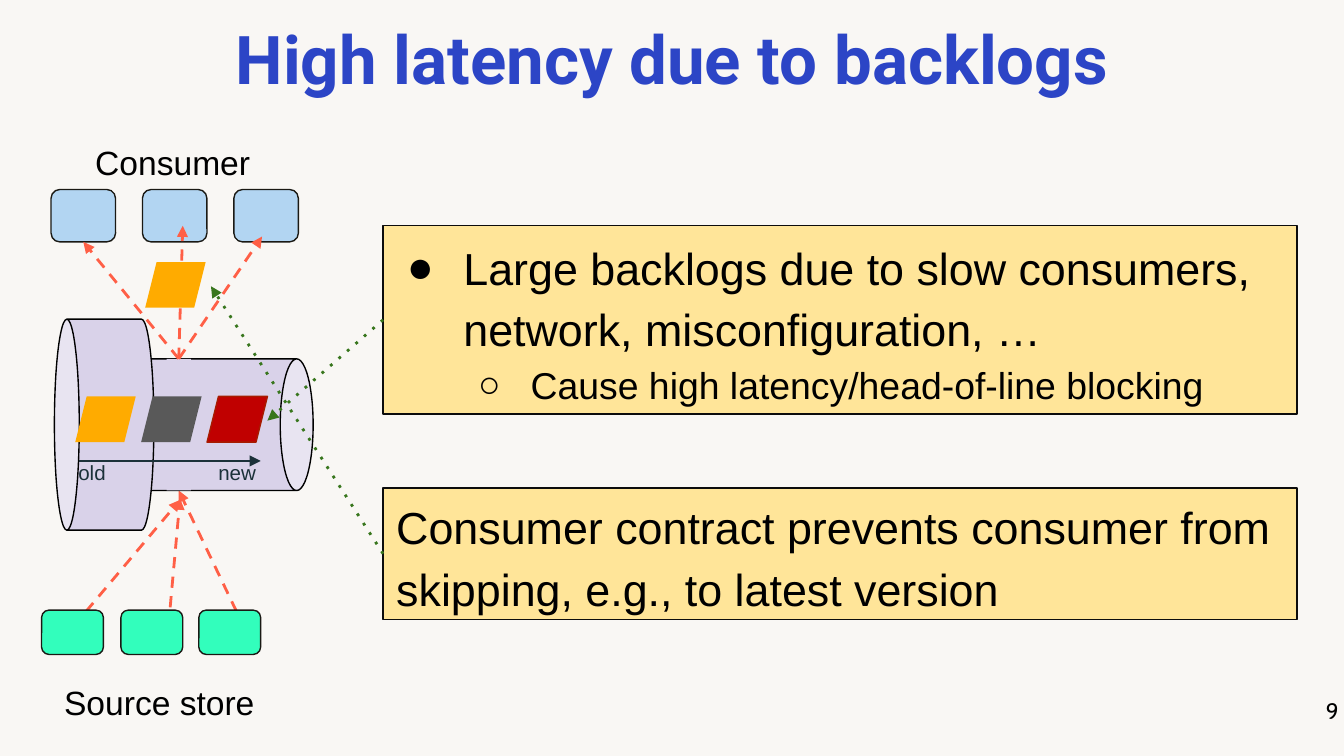
from pptx import Presentation
from pptx.dml.color import RGBColor
from pptx.enum.shapes import MSO_CONNECTOR, MSO_SHAPE
from pptx.enum.text import MSO_ANCHOR, PP_ALIGN
from pptx.oxml.ns import qn
from pptx.util import Pt
from lxml.etree import SubElement

PX = 9144
BACKGROUND = RGBColor(0xF9, 0xF7, 0xF4)
TITLE_BLUE = RGBColor(0x2C, 0x45, 0xC6)
BLACK = RGBColor(0, 0, 0)
BOX_LINE = RGBColor(0x0C, 0x0C, 0x0C)
BOX_FILL = RGBColor(0xFF, 0xE5, 0x99)
NODE_LINE = RGBColor(0x1A, 0x19, 0x14)
CONSUMER_BLUE = RGBColor(0xB2, 0xD5, 0xF2)
SOURCE_GREEN = RGBColor(0x32, 0xFE, 0xBC)
LOG_LILAC = RGBColor(0xD9, 0xD2, 0xE9)
FLOW_RED = RGBColor(0xFF, 0x5F, 0x46)
CALLOUT_GREEN = RGBColor(0x38, 0x76, 0x1D)
AXIS_NAVY = RGBColor(0x1B, 0x31, 0x39)
AMBER = RGBColor(0xFF, 0xAB, 0x00)
GRAY = RGBColor(0x59, 0x59, 0x59)
RED = RGBColor(0xC0, 0, 0)
DARK_RED = RGBColor(0xA6, 0x1C, 0)

LABELS = [
    ("High latency due to backlogs", (34, 15, 932, 63),
     dict(size=36, font="Roboto", color=TITLE_BLUE, bold=True, spacing=0.9,
          anchor=MSO_ANCHOR.MIDDLE, insets=(0, 0))),
    ("Source store", (9, 498, 219, 40), dict(size=18, spacing=1.15)),
    ("Consumer", (11, 96, 235, 40), dict(size=18, spacing=1.15)),
    ("9", (936, 519, 60, 43),
     dict(size=12, font="Cabin", align=PP_ALIGN.RIGHT, insets=(0, 0))),
]
AXIS_LABELS = [("old", (17, 333, 103, 39)), ("new", (125, 333, 103, 39))]
NOTES = [
    ((285, 168, 680, 140), [
        ("Large backlogs due to slow consumers, network, misconfiguration, …",
         dict(size=24, bullet="●", indent=(50, -42))),
        ("Cause high latency/head-of-line blocking",
         dict(size=20, bullet="○", indent=(100, -39), level=1)),
    ]),
    ((285, 363, 680, 98), [
        ("Consumer contract prevents consumer from skipping, e.g., to latest version",
         dict(size=24)),
    ]),
]
SOURCE_FLOWS = [((124, 481), (134, 371)), ((64, 455), (134, 372)), ((176, 455), (133, 365))]
CONSUMER_FLOWS = [((133, 267), end) for end in [(136, 168), (62, 180), (195, 176)]]
CALLOUTS = [((285, 412), (157, 213)), ((285, 238), (199, 313))]
NODE_ROWS = [(38, 174, 141, 48, 39, CONSUMER_BLUE), (31, 148, 454, 46, 33, SOURCE_GREEN)]
QUEUED = [(AMBER, None), (GRAY, None), (RED, DARK_RED)]


def emu(lengths):
    return [length * PX for length in lengths]


def add_bullet(paragraph, character, indent):
    properties = paragraph._p.get_or_add_pPr()
    margin, hanging = emu(indent)
    properties.set("marL", str(margin))
    properties.set("indent", str(hanging))
    color = SubElement(properties, qn("a:buClr"))
    SubElement(color, qn("a:srgbClr")).set("val", str(BLACK))
    SubElement(properties, qn("a:buFont")).set("typeface", "Arial")
    SubElement(properties, qn("a:buChar")).set("char", character)


def write(frame, text, size, font="Arial", color=BLACK, bold=False, spacing=None,
          align=PP_ALIGN.LEFT, bullet=None, indent=None, level=0, first=True):
    paragraph = frame.paragraphs[0] if first else frame.add_paragraph()
    paragraph.alignment = align
    paragraph.level = level
    if spacing:
        paragraph.line_spacing = spacing
    if bullet:
        add_bullet(paragraph, bullet, indent)
    run = paragraph.add_run()
    run.text = text
    run.font.size = Pt(size)
    run.font.name = font
    run.font.bold = bold
    run.font.color.rgb = color


def set_frame(frame, insets, anchor):
    frame.word_wrap = True
    frame.vertical_anchor = anchor
    horizontal, vertical = emu(insets)
    frame.margin_left = frame.margin_right = horizontal
    frame.margin_top = frame.margin_bottom = vertical


def add_label(slide, text, place, insets=(10, 5), anchor=MSO_ANCHOR.TOP,
              align=PP_ALIGN.CENTER, **style):
    frame = slide.shapes.add_textbox(*emu(place)).text_frame
    set_frame(frame, insets, anchor)
    write(frame, text, align=align, **style)


def add_block(slide, kind, place, fill, line=None, adjustment=None, rotation=0):
    shape = slide.shapes.add_shape(kind, *emu(place))
    shape.shadow.inherit = False
    shape.fill.solid()
    shape.fill.fore_color.rgb = fill
    shape.rotation = rotation
    if adjustment:
        shape.adjustments[0] = adjustment
    if line is None:
        shape.line.fill.background()
    else:
        shape.line.color.rgb = line
        shape.line.width = Pt(0.75)
    return shape


def add_arrow(slide, start, end, color, width=1.5, dash="solid"):
    arrow = slide.shapes.add_connector(MSO_CONNECTOR.STRAIGHT, *emu(start + end))
    arrow.line.color.rgb = color
    arrow.line.width = Pt(width)
    outline = arrow.line._get_or_add_ln()
    SubElement(outline, qn("a:prstDash")).set("val", dash)
    SubElement(outline, qn("a:tailEnd")).set("type", "triangle")
    SubElement(arrow._element.spPr, qn("a:effectLst"))


def add_record(slide, left, top, fill, line=None):
    add_block(slide, MSO_SHAPE.PARALLELOGRAM, (left, top, 45, 34), fill, line, 0.25)


def main():
    """Build the slide on backlog latency."""
    presentation = Presentation()
    presentation.slide_width = 1000 * PX
    presentation.slide_height = presentation.slide_width * 9 // 16
    slide = presentation.slides.add_slide(presentation.slide_layouts[6])
    slide.background.fill.solid()
    slide.background.fill.fore_color.rgb = BACKGROUND

    for text, place, style in LABELS:
        add_label(slide, text, place, **style)
    for place, paragraphs in NOTES:
        note = add_block(slide, MSO_SHAPE.RECTANGLE, place, BOX_FILL, BOX_LINE)
        set_frame(note.text_frame, (10, 10), MSO_ANCHOR.MIDDLE)
        for index, (text, style) in enumerate(paragraphs):
            write(note.text_frame, text, spacing=1.15, first=index == 0, **style)

    for start, end in SOURCE_FLOWS:
        add_arrow(slide, start, end, FLOW_RED, dash="dash")
    for first_left, last_left, top, width, height, fill in NODE_ROWS:
        for index in range(3):
            left = round(first_left + index * (last_left - first_left) / 2)
            add_block(slide, MSO_SHAPE.ROUNDED_RECTANGLE,
                      (left, top, width, height), fill, NODE_LINE, 0.167)

    add_block(slide, MSO_SHAPE.CAN, (117, 249, 98, 134), LOG_LILAC, BLACK, 0.25, 90)
    add_block(slide, MSO_SHAPE.CAN, (-1, 279, 157, 74), LOG_LILAC, BLACK, 0.25, 270)
    add_block(slide, MSO_SHAPE.RECTANGLE, (124, 267, 18, 98), LOG_LILAC)

    for start, end in CONSUMER_FLOWS:
        add_arrow(slide, start, end, FLOW_RED, dash="dash")
    for index, (fill, line) in enumerate(QUEUED):
        add_record(slide, 56 + index * 49, 295, fill, line)
    add_arrow(slide, (59, 343), (194, 343), AXIS_NAVY, width=0.75)
    for text, place in AXIS_LABELS:
        add_label(slide, text, place, insets=(10, 10), size=11, color=AXIS_NAVY)
    for start, end in CALLOUTS:
        add_arrow(slide, start, end, CALLOUT_GREEN, dash="dot")
    add_record(slide, 108, 195, AMBER)

    presentation.save("out.pptx")


if __name__ == "__main__":
    main()
